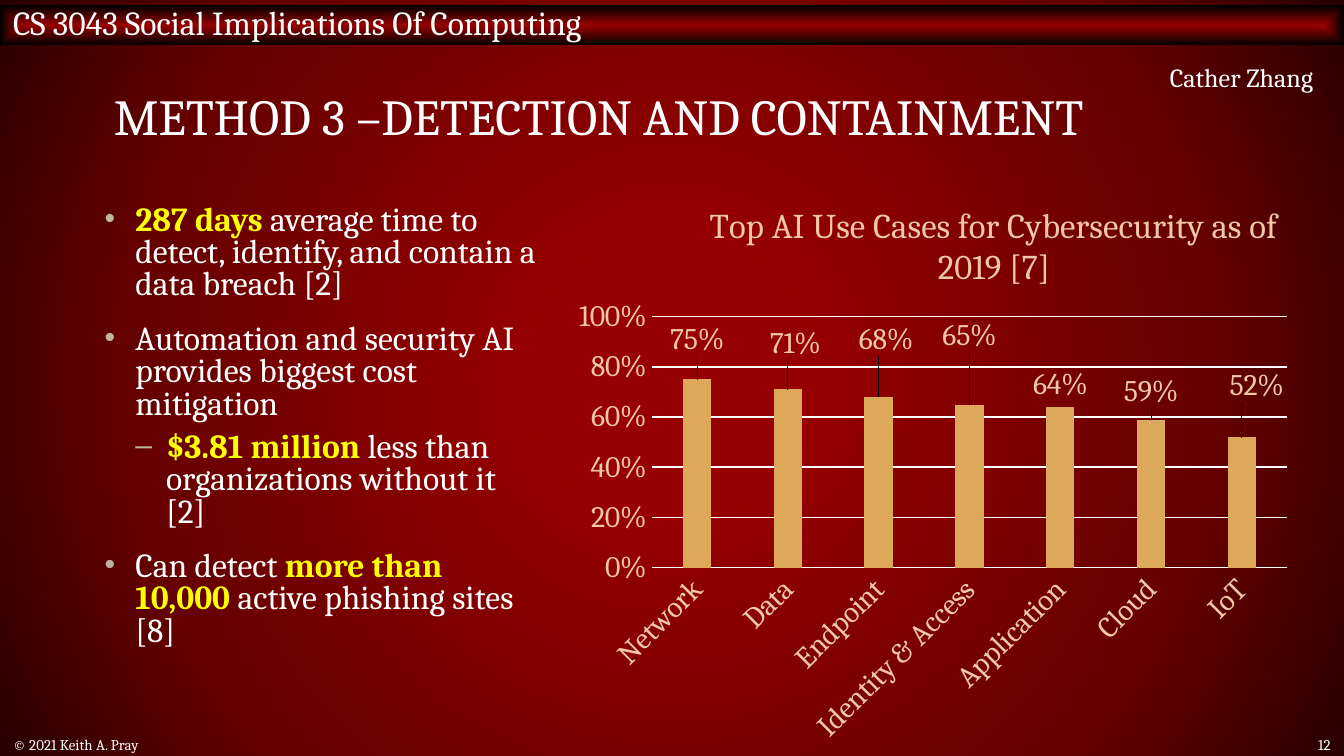
import pptx
import pptx.util
import pptx.chart.data
import pptx.dml.color
import pptx.enum.chart
import pptx.enum.shapes
import pptx.enum.text
import pptx.oxml
import pptx.oxml.ns
import lxml.etree

Cm = pptx.util.Cm
Pt = pptx.util.Pt
qn = pptx.oxml.ns.qn
ALIGN = pptx.enum.text.PP_ALIGN
ANCHOR = pptx.enum.text.MSO_ANCHOR

COLORS = {
    "white": "FFFFFF", "yellow": "FFFF00", "bullet": "BCB49E",
    "label": "F1C7A7", "bar": "DDA859",
    "red": "960000", "wine": "650000", "dark": "290000", "black": "000000",
}
FONT = "Cambria"


def rgb(name):
    return pptx.dml.color.RGBColor.from_string(COLORS[name])


def style_font(font, size, color="white", bold=False):
    font.name, font.size, font.bold = FONT, Pt(size), bold
    font.color.rgb = rgb(color)


def add_text(p, text, size=18, color="white", bold=False, align=ALIGN.LEFT, spacing=None):
    p.alignment = align
    if spacing:
        p.line_spacing = spacing
    r = p.add_run()
    r.text = text
    style_font(r.font, size, color, bold)


def set_path_gradient(parent, path, stops):
    grad = next(parent.iter(qn("a:gradFill")))
    for child in list(grad):
        grad.remove(child)
    gs_list = lxml.etree.SubElement(grad, qn("a:gsLst"))
    for pos, color in stops:
        gs = lxml.etree.SubElement(gs_list, qn("a:gs"), pos=str(pos * 1000))
        lxml.etree.SubElement(gs, qn("a:srgbClr"), val=COLORS[color])
    path_el = lxml.etree.SubElement(grad, qn("a:path"))
    path_el.set("path", path)
    lxml.etree.SubElement(path_el, qn("a:fillToRect"), l="50000", t="50000", r="50000", b="50000")


def set_bullet(p, char, indent):
    pPr = p._p.get_or_add_pPr()
    pPr.set("marL", str(Cm(indent)))
    pPr.set("indent", str(-Cm(0.58)))
    color = lxml.etree.SubElement(pPr, qn("a:buClr"))
    lxml.etree.SubElement(color, qn("a:srgbClr"), val=COLORS["bullet"])
    lxml.etree.SubElement(pPr, qn("a:buSzPct"), val="90000")
    lxml.etree.SubElement(pPr, qn("a:buFont"), typeface="Arial")
    lxml.etree.SubElement(pPr, qn("a:buChar"), char=char)


def manual_layout(parent, index, inner=False, **values):
    for old in parent.findall(qn("c:layout")):
        parent.remove(old)
    layout = lxml.etree.Element(qn("c:layout"))
    manual = lxml.etree.SubElement(layout, qn("c:manualLayout"))
    if inner:
        lxml.etree.SubElement(manual, qn("c:layoutTarget"), val="inner")
    for key, value in values.items():
        lxml.etree.SubElement(manual, qn("c:" + key), val=str(value))
    parent.insert(index, layout)


class Deck:
    def __init__(self):
        self.prs = pptx.Presentation()
        self.prs.slide_width, self.prs.slide_height = Cm(25.4), Cm(14.29)
        self.s = self.prs.slides.add_slide(self.prs.slide_layouts[5])
        self.s.background.fill.gradient()
        set_path_gradient(self.s._element.cSld, "circle", [(17, "red"), (71, "wine"), (100, "dark")])

    def header(self, text, *box):
        sp = self.s.shapes.add_shape(pptx.enum.shapes.MSO_SHAPE.RECTANGLE, *map(Cm, box))
        sp.shadow.inherit = False
        sp.line.fill.background()
        sp.fill.gradient()
        set_path_gradient(sp._element, "shape", [(0, "red"), (100, "black")])
        tf = sp.text_frame
        tf.vertical_anchor = ANCHOR.MIDDLE
        tf.margin_top, tf.margin_bottom = 0, Cm(0.13)
        add_text(tf.paragraphs[0], text)

    def title(self, text, *box):
        sp = self.s.shapes.title
        sp.left, sp.top, sp.width, sp.height = map(Cm, box)
        tf = sp.text_frame
        tf.auto_size = pptx.enum.text.MSO_AUTO_SIZE.NONE
        tf.vertical_anchor = ANCHOR.MIDDLE
        add_text(tf.paragraphs[0], text, size=27, spacing=0.8)

    def text(self, text, *box, anchor=ANCHOR.MIDDLE, **style):
        tf = self.s.shapes.add_textbox(*map(Cm, box)).text_frame
        tf.word_wrap = True
        tf.vertical_anchor = anchor
        add_text(tf.paragraphs[0], text, **style)

    def bullets(self, items, *box):
        tf = self.s.shapes.add_textbox(*map(Cm, box)).text_frame
        tf.word_wrap = True
        for i, (level, runs) in enumerate(items):
            p = tf.add_paragraph() if i else tf.paragraphs[0]
            p.level = level
            if i:
                p.space_before = Pt(6 if level else 12)
            p.line_spacing = 0.8
            set_bullet(p, "•–"[level], 0.58 * (level + 1))
            for text, strong in runs:
                add_text(p, text, color="yellow" if strong else "white", bold=strong)

    def column_chart(self, title, rows, *box):
        data = pptx.chart.data.CategoryChartData(number_format="0%")
        data.categories = [name for name, *_ in rows]
        data.add_series("Series 1", [value for _, value, *_ in rows])
        kind = pptx.enum.chart.XL_CHART_TYPE.COLUMN_CLUSTERED
        chart = self.s.shapes.add_chart(kind, *map(Cm, box), data).chart
        style_font(chart.font, 10, "label")
        chart.has_legend = False
        chart.has_title = True
        add_text(chart.chart_title.text_frame.paragraphs[0], title, size=18.6,
                 color="label", align=ALIGN.CENTER)
        manual_layout(chart.chart_title._element, 1, xMode="edge", yMode="edge", x=0.19, y=0.05)
        manual_layout(chart._chartSpace.chart.plotArea, 0, inner=True, xMode="edge",
                      yMode="edge", x=0.12, y=0.255, w=0.86, h=0.426)

        for axis in (chart.category_axis, chart.value_axis):
            axis.major_tick_mark = pptx.enum.chart.XL_TICK_MARK.NONE
            style_font(axis.tick_labels.font, 16, "label")
        grid = chart.value_axis
        grid.minimum_scale, grid.maximum_scale, grid.major_unit = 0, 1, 0.2
        grid.tick_labels.number_format = "0%"
        grid.tick_labels.number_format_is_linked = False
        grid.format.line.fill.background()
        for line in (chart.category_axis.format.line, grid.major_gridlines.format.line):
            line.color.rgb, line.width = rgb("white"), Pt(0.75)

        plot = chart.plots[0]
        plot.gap_width, plot.overlap, plot.vary_by_categories = 219, -27, False
        series = plot.series[0]
        series.format.fill.solid()
        series.format.fill.fore_color.rgb = rgb("bar")
        for i, (_, _, dx, dy) in enumerate(rows):
            label = series.points[i].data_label
            style_font(label.font, 16, "label")
            label.position = pptx.enum.chart.XL_LABEL_POSITION.OUTSIDE_END
            manual_layout(series._element.dLbls.findall(qn("c:dLbl"))[i], 1, x=dx, y=dy)


def main():
    deck = Deck()
    deck.header("CS 3043 Social Implications Of Computing", 0, 0.1, 25.4, 0.76)
    deck.title("METHOD 3 –DETECTION AND CONTAINMENT", 1.9, 1.02, 21.6, 2.54)
    deck.bullets([
        (0, [("287 days ", True),
             ("average time to detect, identify, and contain a data breach [2]", False)]),
        (0, [("Automation and security AI provides biggest cost mitigation", False)]),
        (1, [("$3.81 million ", True), ("less than organizations without it [2]", False)]),
        (0, [("Can detect ", False), ("more than 10,000 ", True),
             ("active phishing sites [8]", False)]),
    ], 1.73, 3.76, 8.66, 9.32)
    deck.text("© 2021 Keith A. Pray", 0, 13.87, 15.44, 0.41, size=8)
    deck.text("12", 23.67, 13.87, 1.73, 0.41, size=8, align=ALIGN.RIGHT)
    deck.text("Cather Zhang", 19.02, 1.04, 6.05, 0.86, anchor=ANCHOR.TOP, size=14, align=ALIGN.RIGHT)
    deck.column_chart("Top AI Use Cases for Cybersecurity as of 2019 [7]", [
        ("Network", 0.75, 0, -0.03),
        ("Data", 0.71, 0.01, -0.04),
        ("Endpoint", 0.68, 0.01, -0.06),
        ("Identity & Access", 0.65, 0, -0.08),
        ("Application", 0.64, 0, 0),
        ("Cloud", 0.59, 0, -0.01),
        ("IoT", 0.52, 0.02, -0.05),
    ], 10.64, 3.15, 13.97, 11.13)
    deck.prs.save("out.pptx")


if __name__ == "__main__":
    main()
